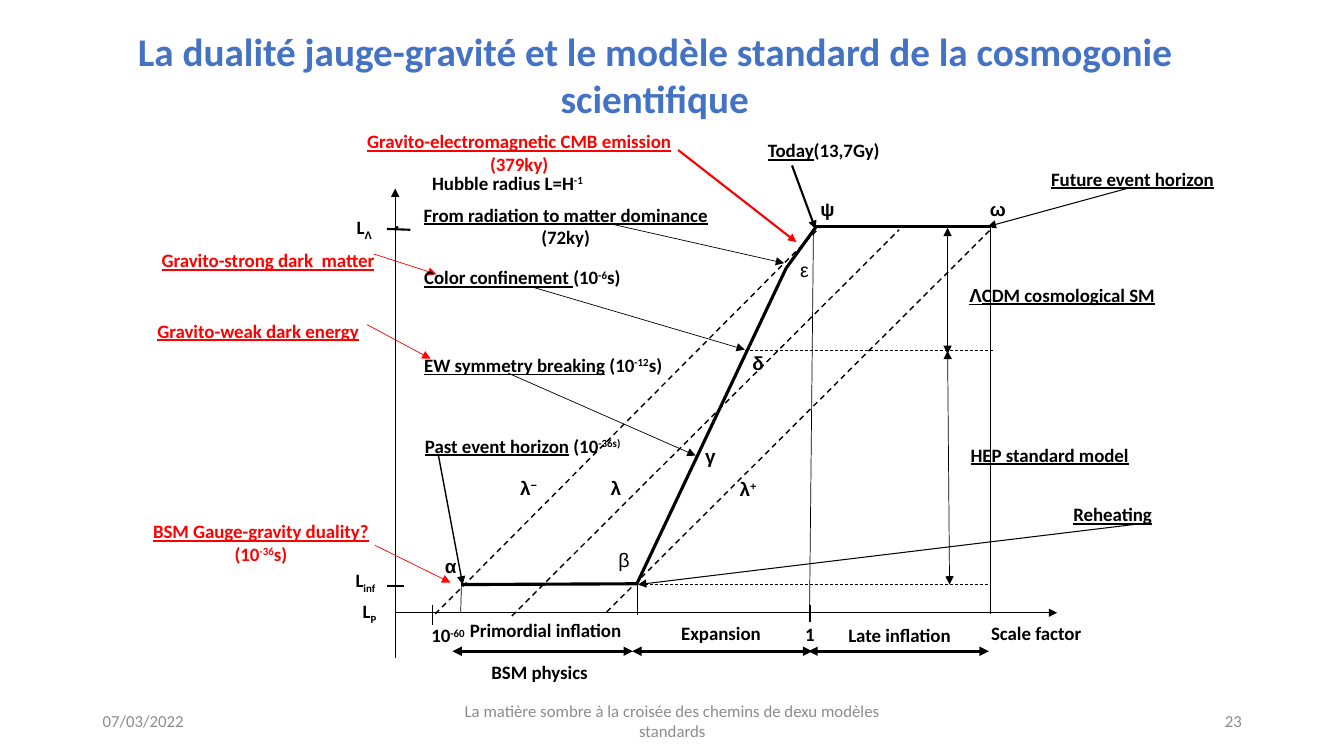
from lxml import etree
from pptx import Presentation
from pptx.dml.color import RGBColor
from pptx.enum.dml import MSO_LINE
from pptx.enum.shapes import MSO_CONNECTOR
from pptx.enum.text import MSO_ANCHOR, MSO_AUTO_SIZE, PP_ALIGN
from pptx.oxml.ns import qn
from pptx.util import Cm, Pt

LEFT, CENTER, RIGHT = PP_ALIGN.LEFT, PP_ALIGN.CENTER, PP_ALIGN.RIGHT
MIDDLE, TOP = MSO_ANCHOR.MIDDLE, MSO_ANCHOR.TOP
GROW, FIXED = MSO_AUTO_SIZE.SHAPE_TO_FIT_TEXT, MSO_AUTO_SIZE.NONE
STRAIGHT, DASH = MSO_CONNECTOR.STRAIGHT, MSO_LINE.DASH
CM_PER_INCH = 2.54
ONE_LINE, TWO_LINES = 0.33, 0.55

COLORS = {"title": "4472C4", "ink": "000000", "alert": "FF0000", "footer": "8C8C8C"}
ARIAL_SIGNS = set("αβγδελψωΛ−+")
BASELINES = {"super": "30000", "sub": "-25000"}

TITLE = "La dualité jauge-gravité et le modèle standard de la cosmogonie scientifique"
TITLE_BOX = (1.07, 0.22, 10.85, 1.04)

# left, width, alignment, text
FOOTERS = [
    (0.92, 3, LEFT, "07/03/2022"),
    (4.42, 4.5, CENTER, "La matière sombre à la croisée des chemins de dexu modèles standards"),
    (9.42, 3, RIGHT, "23"),
]

# left, top, width, alignment, runs; a run is (text, style)
LABELS = [
    (4.07, 1.65, 1.93, CENTER, [("Hubble radius L=H", ""), ("-1", "super")]),
    (9.31, 6.12, 1.94, CENTER, [("Scale factor", "")]),
    (4.49, 6.09, 1.85, CENTER, [("Primordial inflation", "")]),
    (6.3, 6.12, 1.71, CENTER, [("Expansion", "")]),
    (8.07, 6.14, 1.71, CENTER, [("Late inflation", "")]),
    (7.18, 6.13, 1.71, CENTER, [("1", "")]),
    (4.58, 6.5, 1.55, CENTER, [("BSM physics", "")]),
    (3.44, 2.09, 0.51, LEFT, [("L", ""), ("Λ", "sub")]),
    (3.43, 5.59, 0.51, LEFT, [("L", ""), ("inf", "sub")]),
    (3.5, 5.9, 0.51, LEFT, [("L", ""), ("P", "sub")]),
    (4.18, 6.14, 0.94, LEFT, [("10", ""), ("-60", "super")]),
    (5, 4.68, 0.49, CENTER, [("λ", ""), ("−", "super")]),
    (5.87, 4.68, 0.48, CENTER, [("λ", "")]),
    (7.18, 4.69, 0.48, CENTER, [("λ", ""), ("+", "super")]),
    (4.12, 4.26, 2.24, LEFT,
     [("Past event horizon", "under"), (" (10", ""), ("-36s)", "super")]),
    (4.11, 3.46, 2.87, LEFT,
     [("EW symmetry breaking", "under"), (" (10", ""), ("-12", "super"), ("s)", "")]),
    (4.11, 2.59, 2.43, LEFT,
     [("Color confinement ", "under"), ("(10", ""), ("-6", "super"), ("s)", "")]),
    (3.88, 1.97, 3.46, CENTER,
     [("From radiation to matter dominance ", "under"), ("(72ky)", "")]),
    (7.32, 1.33, 1.71, CENTER, [("Today", "under"), ("(13,7Gy)", "")]),
    (10.33, 1.61, 1.96, LEFT, [("Future event horizon", "under")]),
    (10.55, 4.94, 1.96, LEFT, [("Reheating", "under")]),
    (9.52, 2.76, 2.28, LEFT, [("Λ", "under"), ("CDM cosmological SM", "under")]),
    (9.53, 4.35, 1.96, LEFT, [("HEP standard model", "under")]),
]
ALERT_LABELS = [
    (3.42, 1.24, 3.46, CENTER,
     [("Gravito-electromagnetic CMB emission", "under"), (" (379ky)", "")]),
    (0.69, 5.11, 3.8, CENTER, [("BSM Gauge-gravity duality?", "under"), ("", "break"),
                               ("(10", ""), ("-36", "super"), ("s)", "")]),
    (0.66, 3.12, 3.8, CENTER, [("Gravito-weak dark energy", "under")]),
    (0.76, 2.42, 3.8, CENTER, [("Gravito-strong dark  matter", "under")]),
]
TWO_LINE_TOPS = (1.24, 1.97, 5.11)

# letter: left, top, size, bold
POINT_LETTERS = {
    "α": (4.28, 5.45, 13.5, True), "γ": (6.86, 4.36, 13.5, True),
    "δ": (7.33, 3.44, 13.5, True), "ψ": (8.02, 1.91, 13.5, True),
    "ω": (9.71, 1.91, 13.5, True), "ε": (7.79, 2.51, 14, False),
    "β": (6, 5.39, 14, False),
}

ALPHA, BETA, DELTA = (4.58, 5.8), (6.32, 5.79), (7.39, 3.48)
EPSILON, PSI, OMEGA = (7.8, 2.66), (8.1, 2.25), (9.83, 2.25)
ORIGIN_X, SCALE_Y, SPAN_Y = 3.92, 6.08, 6.46

# color, width, dashed, heads ("", "end" or "both"), [(from, to)]
LINE_GROUPS = [
    ("ink", 2.25, False, "",
     [(ALPHA, BETA), (BETA, EPSILON), (EPSILON, PSI), (PSI, OMEGA)]),
    ("ink", 1, True, "", [((4.32, 6.09), (8.13, 2.26)), ((5.08, 6.11), (8.92, 2.28)),
                          ((6.02, 6.07), (9.86, 2.25))]),
    ("ink", 0.5, True, "", [(DELTA, (9.86, 3.48)), ((6.25, 5.8), (9.8, 5.8))]),
    ("ink", 0.5, False, "end", [((ORIGIN_X, 6.53), (ORIGIN_X, 1.87)),
                                ((ORIGIN_X, SCALE_Y), (10.49, SCALE_Y)),
                                ((6.09, 2.23), (7.78, 2.61)), ((5.29, 2.85), (7.39, 3.47)),
                                ((5.04, 3.7), (6.9, 4.52))]),
    ("ink", 2.25, False, "both", [((4.49, SPAN_Y), (6.28, SPAN_Y)),
                                  ((6.27, SPAN_Y), (8.06, SPAN_Y)),
                                  ((8.02, SPAN_Y), (9.81, SPAN_Y))]),
    ("ink", 0.5, False, "both", [((9.4, 2.26), (9.4, 3.51)), ((9.4, 3.48), (9.42, 5.8))]),
    ("ink", 0.5, False, "", [((4.58, 5.78), (4.57, SCALE_Y)), ((6.32, 5.76), (6.32, 6.1)),
                             ((8.07, 2.27), (8.03, 6.14)), ((9.83, 2.24), (9.83, 6.09))]),
    ("ink", 1.5, False, "", [((8.04, 6), (8.04, 6.17)), ((3.95, 2.25), (3.92, 2.27)),
                             ((3.84, 2.27), (4.07, 2.28)), ((3.84, 5.81), (4.01, 5.81))]),
    ("ink", 1, False, "", [((4.29, 6), (4.29, 6.2))]),
    ("ink", 1, False, "end", [((4.35, 4.52), (4.59, 5.8))]),
    ("ink", 0.75, False, "end", [((11.18, 1.87), (9.8, 2.25)), ((11.27, 5.2), (6.33, 5.8))]),
    ("ink", 1.5, False, "end", [((7.86, 1.64), (8.09, 2.27))]),
    ("alert", 1.5, False, "end", [((6.73, 1.49), (7.9, 2.4))]),
    ("alert", 0.5, False, "end", [((3.71, 2.52), (4.33, 2.72)), ((3.64, 3.22), (4.27, 3.56)),
                                  ((3.72, 5.41), (4.47, 5.78))]),
]


def to_cm(*inches):
    return [Cm(round(value * CM_PER_INCH, 2)) for value in inches]


def set_all(target, values):
    for name, value in values.items():
        setattr(target, name, value)


def write_runs(shape, runs, align, color, size, bold, anchor=TOP, grow=GROW):
    frame = shape.text_frame
    set_all(frame, {"word_wrap": True, "auto_size": grow, "vertical_anchor": anchor})
    paragraph = frame.paragraphs[0]
    paragraph.alignment = align
    for text, style in runs:
        if style == "break":
            paragraph = frame.add_paragraph()
            paragraph.alignment = align
            continue
        run = paragraph.add_run()
        run.text = text
        face = "Arial" if set(text) <= ARIAL_SIGNS else "Calibri"
        set_all(run.font, {"name": face, "size": Pt(size), "bold": bold,
                           "underline": style == "under"})
        run.font.color.rgb = RGBColor.from_string(COLORS[color])
        if style in BASELINES:
            run.font._element.set("baseline", BASELINES[style])


def draw_line(slide, start, end, color, width, dashed, heads):
    connector = slide.shapes.add_connector(STRAIGHT, *to_cm(*start, *end))
    line = connector.line
    line.width = Pt(width)
    line.color.rgb = RGBColor.from_string(COLORS[color])
    if dashed:
        line.dash_style = DASH
    arrow_tags = {"": [], "end": ["a:tailEnd"], "both": ["a:headEnd", "a:tailEnd"]}[heads]
    properties = connector._element.spPr
    for tag in arrow_tags:
        etree.SubElement(properties.find(qn("a:ln")), qn(tag), type="triangle")
    etree.SubElement(properties, qn("a:effectLst"))


def main():
    presentation = Presentation()
    presentation.slide_width, presentation.slide_height = to_cm(13.333, 7.5)
    slide = presentation.slides.add_slide(presentation.slide_layouts[5])

    title = slide.shapes.title
    set_all(title, dict(zip(("left", "top", "width", "height"), to_cm(*TITLE_BOX))))
    write_runs(title, [(TITLE, "")], CENTER, "title", 28, True)

    for color, width, dashed, heads, segments in LINE_GROUPS:
        for start, end in segments:
            draw_line(slide, start, end, color, width, dashed, heads)

    for color, labels in (("ink", LABELS), ("alert", ALERT_LABELS)):
        for left, top, width, align, runs in labels:
            height = TWO_LINES if top in TWO_LINE_TOPS else ONE_LINE
            box = slide.shapes.add_textbox(*to_cm(left, top, width, height))
            write_runs(box, runs, align, color, 13.5, True)

    for letter, (left, top, size, bold) in POINT_LETTERS.items():
        box = slide.shapes.add_textbox(*to_cm(left, top, 0.38, ONE_LINE))
        write_runs(box, [(letter, "")], CENTER, "ink", size, bold)

    for left, width, align, text in FOOTERS:
        box = slide.shapes.add_textbox(*to_cm(left, 6.95, width, 0.4))
        write_runs(box, [(text, "")], align, "footer", 12, False, MIDDLE, FIXED)

    presentation.save("out.pptx")


if __name__ == "__main__":
    main()
